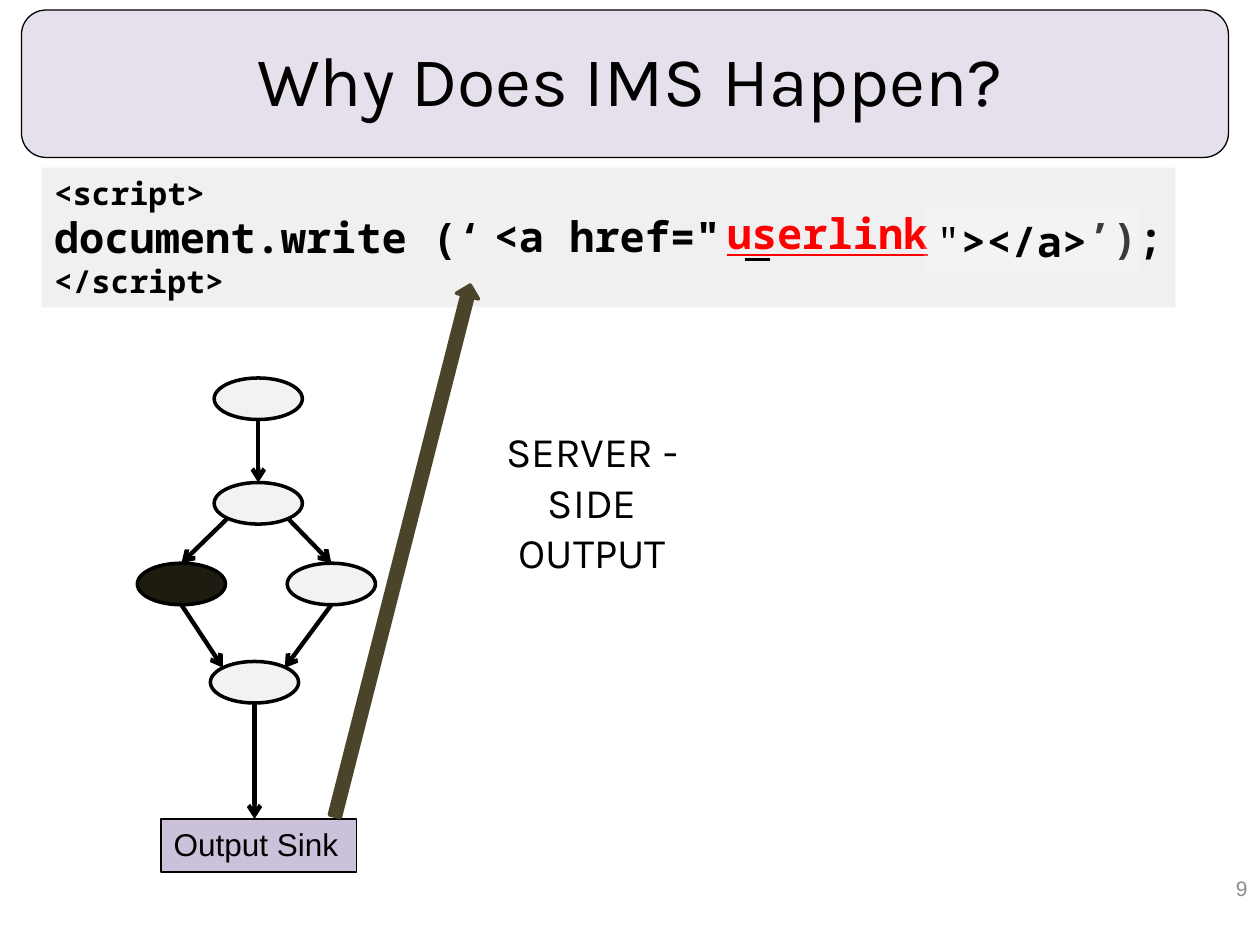
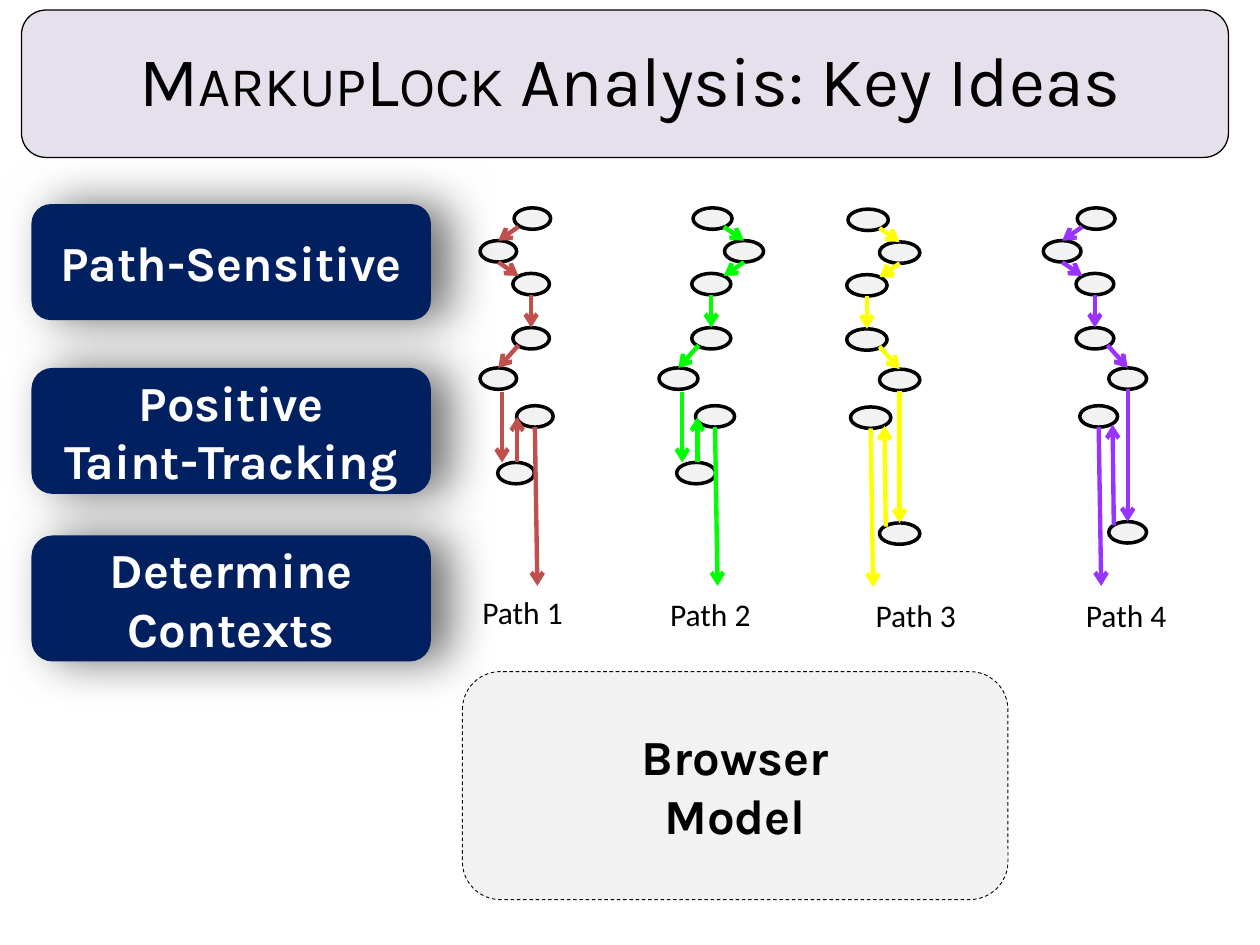
from lxml import etree
from pptx import Presentation
from pptx import util as u
from pptx.dml import color
from pptx.enum import dml, shapes, text
from pptx.oxml import ns

PX = 9144
C = {
    "black": "000000", "white": "FFFFFF", "title": "E6E0EC", "node": "F2F2F2",
    "dark": "1E1C11", "sink": "CCC1DA", "code": "BFBFBF", "red": "FF0000",
    "flow": "4A452A", "navy": "002060", "number": "8C8C8C", "path1": "C0504D",
    "path2": "00FF00", "path3": "FFFF00", "path4": "9933FF",
}
RECT = shapes.MSO_SHAPE.RECTANGLE
ROUND = shapes.MSO_SHAPE.ROUNDED_RECTANGLE
OVAL = shapes.MSO_SHAPE.OVAL
LEFT, CENTER, RIGHT = text.PP_ALIGN.LEFT, text.PP_ALIGN.CENTER, text.PP_ALIGN.RIGHT
TOP, MIDDLE = text.MSO_ANCHOR.TOP, text.MSO_ANCHOR.MIDDLE
MONO = "Noto Sans Mono"


def add_box(s, kind, at, paras=(), fill=None, alpha=None, line=None, weight=1,
            font="Karla", size=18, ink="black", bold=False, align=LEFT, anchor=TOP):
    at = [v * PX for v in at]
    if kind is None:
        sp = s.shapes.add_textbox(*at)
    else:
        sp = s.shapes.add_shape(kind, *at)
        sp.shadow.inherit = False
        sp.fill.solid()
        sp.fill.fore_color.rgb = color.RGBColor.from_string(C[fill])
        if alpha:
            clr = sp.fill._xPr.find(".//" + ns.qn("a:srgbClr"))
            etree.SubElement(clr, ns.qn("a:alpha"), val=str(alpha * 1000))
        if line:
            sp.line.color.rgb = color.RGBColor.from_string(C[line])
            sp.line.width = u.Pt(weight)
        else:
            sp.line.fill.background()
    tf = sp.text_frame
    tf.word_wrap = True
    tf.vertical_anchor = anchor
    for i, runs in enumerate(paras):
        p = tf.paragraphs[0] if i == 0 else tf.add_paragraph()
        p.alignment = align
        for words, run_size, run_bold in runs:
            r = p.add_run()
            r.text = words
            r.font.name = font
            r.font.size = u.Pt(run_size or size)
            r.font.bold = bold or run_bold
            r.font.color.rgb = color.RGBColor.from_string(C[ink])
    return sp


def add_line(s, x1, y1, x2, y2, ink="black", weight=2.5, arrow=True):
    cx = s.shapes.add_connector(shapes.MSO_CONNECTOR.STRAIGHT,
                                *[int(v * PX) for v in (x1, y1, x2, y2)])
    cx.line.color.rgb = color.RGBColor.from_string(C[ink])
    cx.line.width = u.Pt(weight)
    if arrow:
        etree.SubElement(cx.line._get_or_add_ln(), ns.qn("a:tailEnd"), type="arrow")
    etree.SubElement(cx._element.spPr, ns.qn("a:effectLst"))


prs = Presentation()
prs.slide_width, prs.slide_height = 1000 * PX, 750 * PX
titles = [
    [("Why Does IMS Happen?", 40, False)],
    [("M", 40, False), ("ARKUP", 32, False), ("L", 40, False), ("OCK", 32, False),
     (" Analysis: Key Ideas", 40, False)],
]
slides = []
for runs in titles:
    s = prs.slides.add_slide(prs.slide_layouts[6])
    add_box(s, ROUND, (17, 8, 958, 117), fill="title", line="black", weight=0.75)
    add_box(s, None, (50, 0, 900, 125), [runs], align=CENTER, anchor=MIDDLE)
    slides.append(s)

s = slides[0]
add_box(s, None, (767, 685, 233, 40), [[("9", 12, False)]], font="Arial", ink="number",
        align=RIGHT, anchor=MIDDLE)
nodes = [(170, 300, "node"), (170, 383, "node"), (109, 447, "dark"),
         (228, 447, "node"), (167, 525, "node")]
for x, y, fill in nodes:
    add_box(s, OVAL, (x, y, 70, 33), fill=fill, line="black", weight=2)
add_box(s, RECT, (128, 650, 155, 42), [[("Output Sink", 18, False)]], fill="sink",
        line="black", font="Arial")
edges = [(205, 333, 205, 383), (229, 412, 263, 447), (180, 412, 144, 447),
         (263, 480, 226, 530), (144, 480, 177, 530), (202, 558, 202, 650)]
for edge in edges:
    add_line(s, *edge)

sp = add_box(s, RECT, (33, 133, 900, 111),
             [[("<script>", 18, True)], [("document.write (‘\t’);", 24, True)],
              [("</script>", 18, True)]], fill="code", alpha=23, font=MONO)
sp.text_frame.margin_right = 0
pPr = sp.text_frame.paragraphs[1]._p.get_or_add_pPr()
tabs = etree.SubElement(pPr, ns.qn("a:tabLst"))
etree.SubElement(tabs, ns.qn("a:tab"), pos=str(820 * PX), algn="l")
add_box(s, None, (382, 162, 240, 50), [[('<a href="', 24, True)]], font=MONO)
add_line(s, 591, 206, 611, 206, weight=1.5, arrow=False)
sp = add_box(s, None, (567, 160, 190, 50), [[("userlink", 24, True)]], font=MONO, ink="red")
sp.text_frame.paragraphs[0].runs[0].font.underline = True
add_box(s, RECT, (733, 166, 172, 50), [[('"', 24, False), ("></a>", 24, True)]],
        fill="white", alpha=23, font=MONO)
sp = add_box(s, shapes.MSO_SHAPE.RIGHT_ARROW, (102, 428, 435, 18), fill="flow",
             line="flow", weight=2)
sp.rotation = 284.3
add_box(s, None, (360, 333, 220, 130),
        [[("SERVER - SIDE", 24, False)], [("OUTPUT", 24, False)]], align=CENTER)

s = slides[1]
sp = add_box(s, ROUND, (367, 533, 433, 181), [[("Browser", 28, True)], [("Model", 28, True)]],
             fill="node", line="black", weight=0.5, align=CENTER, anchor=MIDDLE)
sp.line.dash_style = dml.MSO_LINE.DASH

paths = [
    ("Path 1", "path1", 407, 29, 0, -1, -1, 373, 466),
    ("Path 2", "path2", 549, 31, 0, 1, -1, 522, 467),
    ("Path 3", "path3", 672, 32, 1, 1, 1, 685, 468),
    ("Path 4", "path4", 854, 30, 0, -1, 1, 852, 468),
]
loops = {
    -1: dict(node=(-12, 367), drop=(-23, 311, -23, 367), back=(-11, 367, -11, 331)),
    1: dict(node=(26, 414), drop=(26, 309, 26, 414), back=(15, 417, 14, 337)),
}
for label, ink, x, w, dy, first, second, label_x, label_y in paths:
    g = s.shapes.add_group_shape()
    loop = loops[second]
    for dx, y in [(1, 165), (26 * first, 191), (0, 217), (0, 260), (26 * second, 292),
                  (3, 322), loop["node"]]:
        add_box(g, OVAL, (x + dx, y + dy, w, 17), fill="node", line="black", weight=2)
    mid = x + w / 2
    steps = [(10 * first, 180, 26 * first, 191), (26 * first, 208, 10 * first, 219),
             (0, 234, 0, 260), (10 * second, 274, 26 * second, 292),
             loop["drop"], loop["back"], (3, 339, 5, 465)]
    for x1, y1, x2, y2 in steps:
        add_line(g, mid + x1, y1 + dy, mid + x2, y2 + dy, ink)
    add_box(s, None, (label_x, label_y, 95, 40), [[(label, 18, False)]], font="Calibri")

ideas = [(162, 92, ["Path-Sensitive"]), (292, 100, ["Positive", "Taint-Tracking"]),
         (425, 100, ["Determine", "Contexts"])]
for y, h, lines in ideas:
    sp = add_box(s, ROUND, (25, y, 317, h), [[(words, 28, True)] for words in lines],
                 fill="navy", ink="white", align=CENTER, anchor=MIDDLE)
    effects = sp._element.spPr.find(ns.qn("a:effectLst"))
    shadow = etree.SubElement(effects, ns.qn("a:outerShdw"), blurRad=str(u.Pt(27)),
                              dist=str(u.Pt(11)), dir="0", algn="ctr", rotWithShape="0")
    clr = etree.SubElement(shadow, ns.qn("a:srgbClr"), val=C["black"])
    etree.SubElement(clr, ns.qn("a:alpha"), val="56000")

prs.save("out.pptx")
